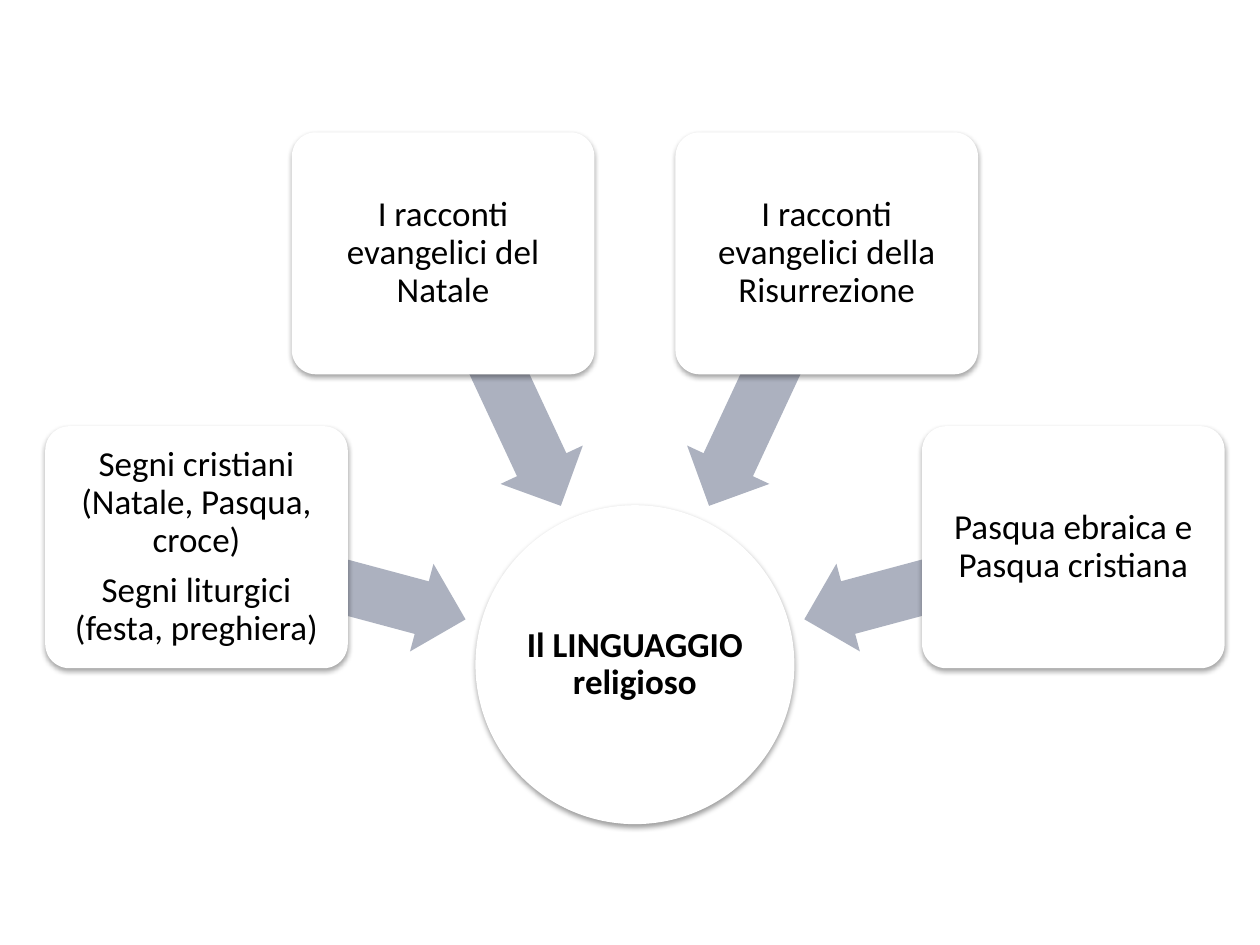
from dataclasses import dataclass
from math import cos, radians, sin

from lxml import etree
from pptx import Presentation
from pptx.dml.color import RGBColor
from pptx.enum import shapes, text
from pptx.oxml import ns
from pptx.util import Cm, Inches, Pt


@dataclass(frozen=True)
class Theme:
    font: str = "Calibri"
    size: int = 20
    ink: str = "000000"
    paper: str = "FFFFFF"
    arrow: str = "ACB1BF"
    shadow: str = "000000"


THEME = Theme()
HUB = ["Il LINGUAGGIO religioso"]
CARDS = [
    ["Segni cristiani (Natale, Pasqua, croce)", "Segni liturgici (festa, preghiera)"],
    ["I racconti evangelici del Natale"],
    ["I racconti evangelici della Risurrezione"],
    ["Pasqua ebraica e Pasqua cristiana"],
]
FIRST_ANGLE, ANGLE_STEP = 195, 50
HUB_SIZE = 6.43
CARD_WIDTH, CARD_HEIGHT, CARD_RADIUS = 6.1, 4.88, 9.15
ARROW_WIDTH, ARROW_HEIGHT, ARROW_RADIUS = 5.61, 1.83, 6.34


def add_centred(group, kind, x, y, width, height, fill):
    shape = group.shapes.add_shape(
        kind, Cm(x - width / 2), Cm(y - height / 2), Cm(width), Cm(height))
    shape.shadow.inherit = False
    shape.fill.solid()
    shape.fill.fore_color.rgb = RGBColor.from_string(fill)
    shape.line.fill.background()
    return shape


def add_shadow(shape, distance, opacity):
    effects = shape._element.spPr.find(ns.qn("a:effectLst"))
    shadow = etree.SubElement(
        effects, ns.qn("a:outerShdw"), blurRad=str(Pt(3.1)), dist=str(Pt(distance)),
        dir=str(90 * 60000), rotWithShape="0")
    color = etree.SubElement(shadow, ns.qn("a:srgbClr"), val=THEME.shadow)
    etree.SubElement(color, ns.qn("a:alpha"), val=str(opacity * 1000))


def write_text(shape, lines, inset, bold=False):
    frame = shape.text_frame
    frame.word_wrap = True
    frame.vertical_anchor = text.MSO_ANCHOR.MIDDLE
    frame.margin_left = frame.margin_right = Cm(inset)
    frame.margin_top = frame.margin_bottom = Cm(inset)
    frame.text = "\n".join(lines)
    for para in frame.paragraphs:
        para.alignment = text.PP_ALIGN.CENTER
        para.line_spacing = 0.9
        para.space_after = Pt(0.35 * THEME.size)
        para.font.name = THEME.font
        para.font.size = Pt(THEME.size)
        para.font.bold = bold
        para.font.color.rgb = RGBColor.from_string(THEME.ink)


def add_hub(group, x, y):
    hub = add_centred(group, shapes.MSO_SHAPE.OVAL, x, y, HUB_SIZE, HUB_SIZE, THEME.paper)
    add_shadow(hub, 1.6, 38)
    write_text(hub, HUB, 0.03, bold=True)


def add_spoke(group, x, y, angle, lines):
    across, down = cos(radians(angle)), sin(radians(angle))
    arrow = add_centred(
        group, shapes.MSO_SHAPE.LEFT_ARROW, x + ARROW_RADIUS * across,
        y + ARROW_RADIUS * down, ARROW_WIDTH, ARROW_HEIGHT, THEME.arrow)
    arrow.adjustments[0] = 0.6
    arrow.adjustments[1] = 0.5
    arrow.rotation = angle
    card = add_centred(
        group, shapes.MSO_SHAPE.ROUNDED_RECTANGLE, x + CARD_RADIUS * across,
        y + CARD_RADIUS * down, CARD_WIDTH, CARD_HEIGHT, THEME.paper)
    card.adjustments[0] = 0.1
    add_shadow(card, 1.8, 35)
    write_text(card, lines, 0.1)


def add_radial_diagram(page, x, y):
    group = page.shapes.add_group_shape()
    add_hub(group, x, y)
    for index, lines in enumerate(CARDS):
        add_spoke(group, x, y, FIRST_ANGLE + index * ANGLE_STEP, lines)


def main():
    deck = Presentation()
    deck.slide_width, deck.slide_height = Inches(10), Inches(7.5)
    page = deck.slides.add_slide(deck.slide_layouts.get_by_name("Blank"))
    add_radial_diagram(page, 12.8, 13.4)
    deck.save("out.pptx")


if __name__ == "__main__":
    main()
